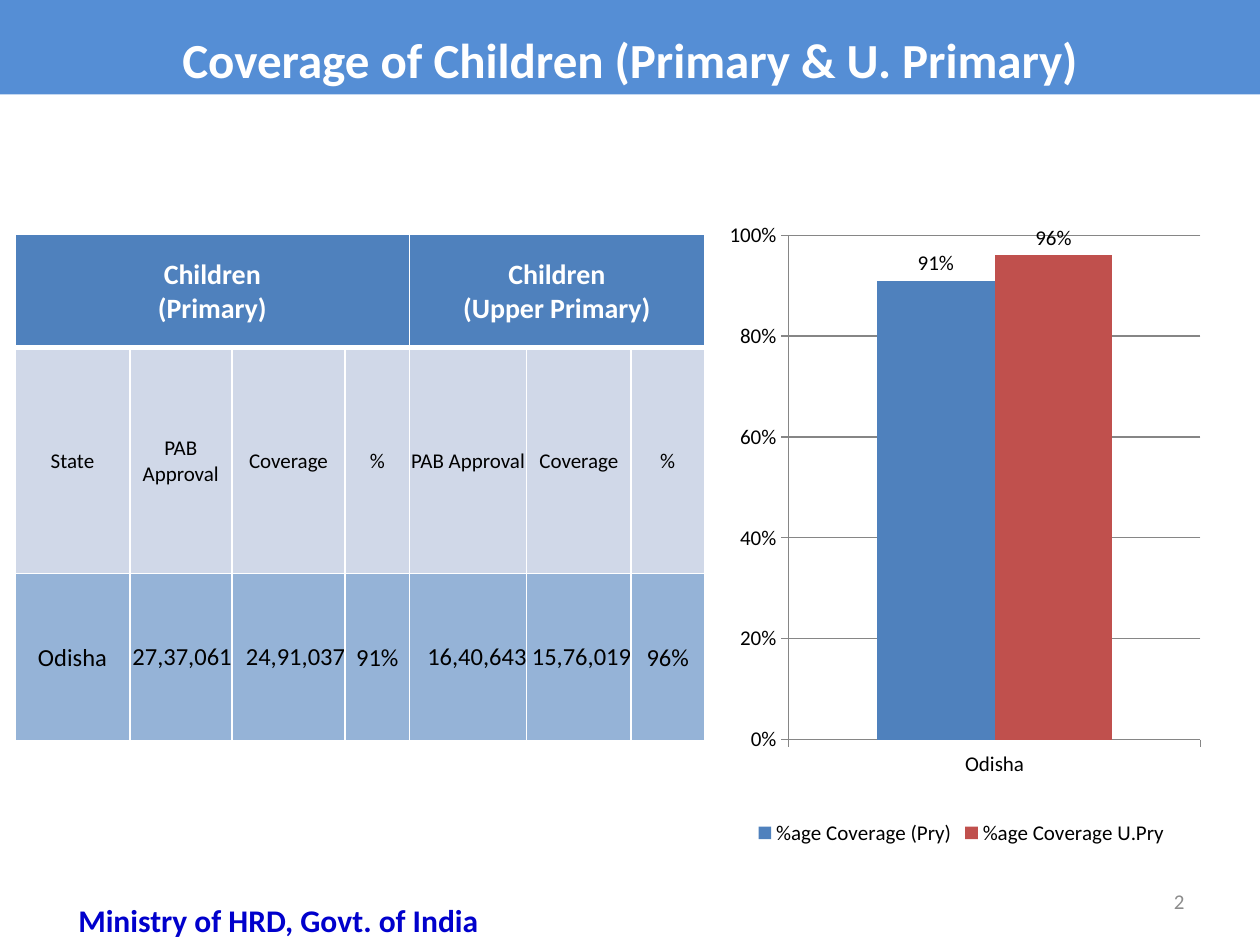
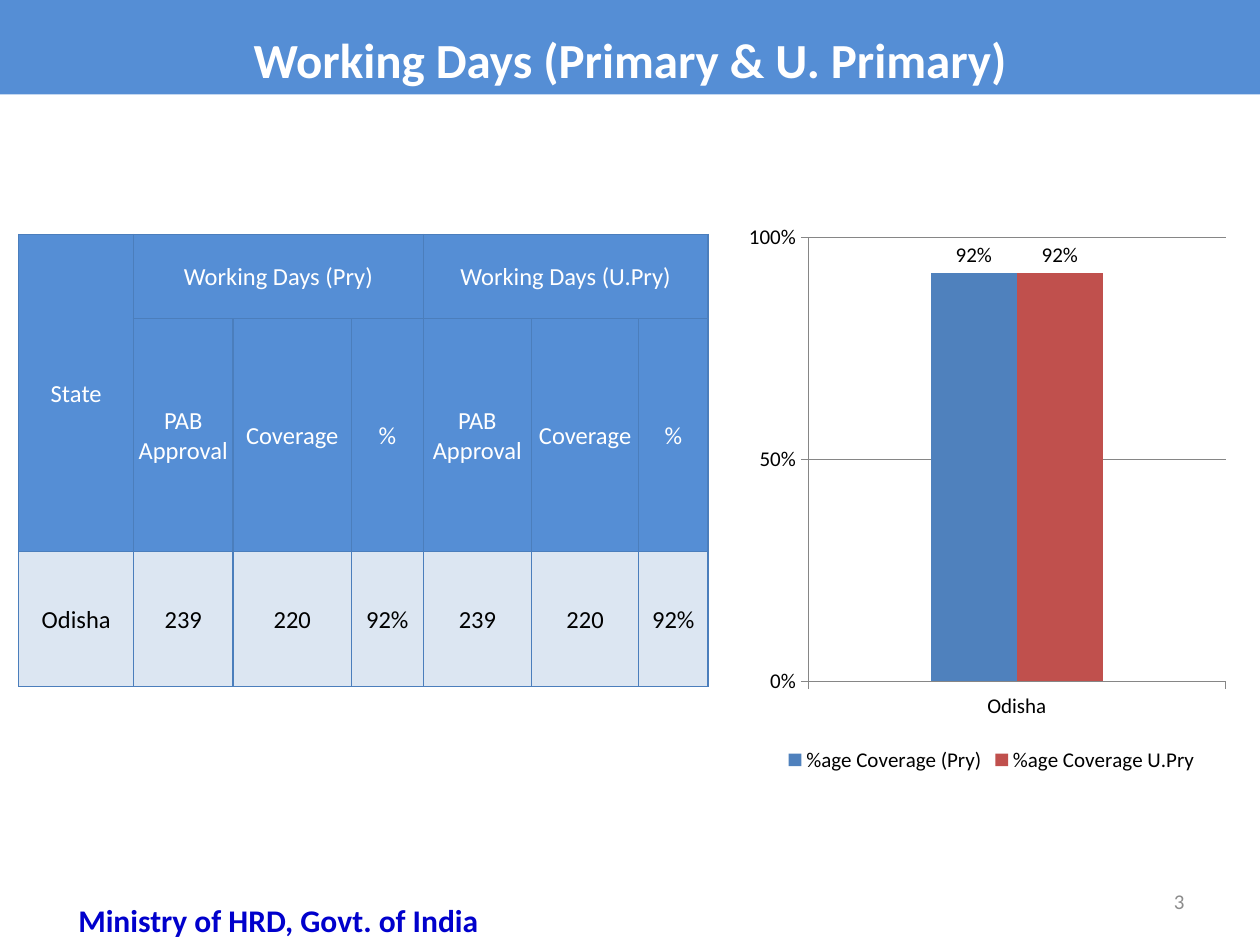
from dataclasses import dataclass

from lxml.etree import SubElement
from pptx import Presentation
from pptx.chart.data import CategoryChartData
from pptx.dml.color import RGBColor
from pptx.enum.chart import XL_CHART_TYPE, XL_LABEL_POSITION, XL_LEGEND_POSITION, XL_TICK_MARK
from pptx.enum.shapes import MSO_SHAPE
from pptx.enum.text import MSO_ANCHOR, PP_ALIGN
from pptx.oxml.ns import qn
from pptx.slide import Slide
from pptx.table import _Cell
from pptx.text.text import TextFrame
from pptx.util import Inches, Pt

FONT = "Calibri"
WHITE = RGBColor(0xFF, 0xFF, 0xFF)
BLACK = RGBColor(0, 0, 0)
BAND_BLUE = RGBColor(0x55, 0x8E, 0xD5)
PRIMARY_BLUE = RGBColor(0x4F, 0x81, 0xBD)
UPPER_RED = RGBColor(0xC0, 0x50, 0x4D)
LABEL_ROW = RGBColor(0xD0, 0xD8, 0xE8)
VALUE_ROW = RGBColor(0x95, 0xB3, 0xD7)
PALE_ROW = RGBColor(0xDC, 0xE6, 0xF2)
GRID_BLUE = RGBColor(0x4B, 0x7E, 0xBC)
AXIS_GRAY = RGBColor(0x86, 0x86, 0x86)
PAGE_GRAY = RGBColor(0x8C, 0x8C, 0x8C)
MINISTRY_BLUE = RGBColor(0, 0, 0xCC)

Box = tuple[float, float, float, float]
STATE = "Odisha"
SERIES = (("%age Coverage (Pry)", PRIMARY_BLUE), ("%age Coverage U.Pry", UPPER_RED))
MEASURES = ("PAB Approval", "Coverage", "%")


@dataclass(frozen=True)
class Row:
    height: float
    texts: tuple[str, ...]
    fill: RGBColor
    color: RGBColor
    size: int
    bold: bool = False
    right_aligned: tuple[int, ...] = ()
    top: float | None = None  # border widths that differ from the table's
    bottom: float | None = None


@dataclass(frozen=True)
class StateTable:
    left: float
    columns: tuple[float, ...]
    rows: tuple[Row, ...]
    merges: tuple[tuple[int, int, int, int], ...]  # first row, column; last row, column
    border: RGBColor
    border_width: float


@dataclass(frozen=True)
class CoverageChart:
    box: Box
    plot: Box
    shares: tuple[float, float]
    major_unit: float
    gap: int


@dataclass(frozen=True)
class Topic:
    title: str
    page: int
    table: StateTable
    chart: CoverageChart


TOPICS = (
    Topic(
        "Coverage of Children (Primary & U. Primary)", 2,
        StateTable(
            0.12, (0.91, 0.81, 0.9, 0.51, 0.93, 0.83, 0.58),
            (
                Row(0.9, ("Children\n(Primary)", "", "", "", "Children\n(Upper Primary)", "", ""),
                    PRIMARY_BLUE, WHITE, 16, bold=True, bottom=3),
                Row(1.79, ("State", *MEASURES * 2), LABEL_ROW, BLACK, 12, top=3),
                Row(1.33, (STATE, "27,37,061", "24,91,037", "91%", "16,40,643", "15,76,019", "96%"),
                    VALUE_ROW, BLACK, 14, right_aligned=(1, 2, 4, 5)),
            ),
            ((0, 0, 0, 3), (0, 4, 0, 6)), WHITE, 1,
        ),
        CoverageChart((5.58, 1.42, 4.1, 5.33), (0.166, 0.084, 0.797, 0.751), (0.91, 0.96), 0.2, 150),
    ),
    Topic(
        "Working Days (Primary & U. Primary)", 3,
        StateTable(
            0.15, (0.91, 0.79, 0.94, 0.57, 0.86, 0.85, 0.55),
            (
                Row(0.67, ("State", "Working Days (Pry)", "", "", "Working Days (U.Pry)", "", ""),
                    BAND_BLUE, WHITE, 14),
                Row(1.85, ("", *MEASURES * 2), BAND_BLUE, WHITE, 14),
                Row(1.07, (STATE, *("239", "220", "92%") * 2), PALE_ROW, BLACK, 14),
            ),
            ((0, 0, 1, 0), (0, 1, 0, 3), (0, 4, 0, 6)), GRID_BLUE, 0.75,
        ),
        CoverageChart((5.86, 1.56, 4.02, 4.61), (0.138, 0.071, 0.824, 0.764), (0.92, 0.92), 0.5, 285),
    ),
)


def write(frame: TextFrame, text: str, size: int, color: RGBColor,
          align: PP_ALIGN = PP_ALIGN.CENTER, bold: bool = False) -> None:
    frame.text = text
    frame.word_wrap = True
    for paragraph in frame.paragraphs:
        paragraph.alignment = align
        font = paragraph.font
        font.name, font.size, font.bold = FONT, Pt(size), bold
        font.color.rgb = color


def add_title(slide: Slide, title: str) -> None:
    band = slide.shapes.add_shape(MSO_SHAPE.RECTANGLE, 0, 0, Inches(10), Inches(0.75))
    band.shadow.inherit = False
    band.fill.solid()
    band.fill.fore_color.rgb = BAND_BLUE
    band.line.fill.background()
    write(band.text_frame, title, 28, WHITE, bold=True)
    band.text_frame.vertical_anchor = MSO_ANCHOR.MIDDLE
    band.text_frame.paragraphs[0].line_spacing = 1.4


def add_footer(slide: Slide, page: int) -> None:
    number = slide.shapes.add_textbox(Inches(7.17), Inches(6.95), Inches(2.33), Inches(0.4))
    write(number.text_frame, str(page), 12, PAGE_GRAY, PP_ALIGN.RIGHT)
    number.text_frame.vertical_anchor = MSO_ANCHOR.MIDDLE
    ministry = slide.shapes.add_textbox(Inches(0.25), Inches(7.1), Inches(3.92), Inches(0.4))
    write(ministry.text_frame, "Ministry of HRD, Govt. of India", 18, MINISTRY_BLUE, bold=True)


def set_borders(cell: _Cell, color: RGBColor, widths: dict[str, float]) -> None:
    properties = cell._tc.get_or_add_tcPr()
    for side, width in widths.items():
        line = SubElement(properties, qn(f"a:ln{side}"), w=str(Pt(width)))
        SubElement(SubElement(line, qn("a:solidFill")), qn("a:srgbClr"), val=str(color))


def add_state_table(slide: Slide, spec: StateTable) -> None:
    table = slide.shapes.add_table(
        len(spec.rows), len(spec.columns), Inches(spec.left), Inches(1.86),
        Inches(sum(spec.columns)), Inches(sum(row.height for row in spec.rows))).table
    table.first_row = table.horz_banding = False
    for column, width in zip(table.columns, spec.columns):
        column.width = Inches(width)
    for r, row in enumerate(spec.rows):
        table.rows[r].height = Inches(row.height)
        widths = {"L": spec.border_width, "R": spec.border_width,
                  "T": row.top or spec.border_width, "B": row.bottom or spec.border_width}
        for c, text in enumerate(row.texts):
            cell = table.cell(r, c)
            right = c in row.right_aligned
            # Borders come before the fill in the cell properties
            set_borders(cell, spec.border, widths)
            cell.fill.solid()
            cell.fill.fore_color.rgb = row.fill
            cell.margin_left = cell.margin_right = cell.margin_top = Inches(0 if right else 0.01)
            cell.margin_bottom = 0
            cell.vertical_anchor = MSO_ANCHOR.MIDDLE
            write(cell.text_frame, text, row.size, row.color,
                  PP_ALIGN.RIGHT if right else PP_ALIGN.CENTER, row.bold)
    for top, left, bottom, right in spec.merges:
        table.cell(top, left).merge(table.cell(bottom, right))


def add_coverage_chart(slide: Slide, spec: CoverageChart) -> None:
    data = CategoryChartData(number_format="0%")
    data.categories = [STATE]
    for (name, _), share in zip(SERIES, spec.shares):
        data.add_series(name, [share])
    chart = slide.shapes.add_chart(
        XL_CHART_TYPE.COLUMN_CLUSTERED, *map(Inches, spec.box), data).chart
    chart.has_title = False
    chart.font.name, chart.font.size = FONT, Pt(12)
    chart.font.color.rgb = BLACK
    chart.has_legend = True
    chart.legend.position = XL_LEGEND_POSITION.BOTTOM
    chart.legend.include_in_layout = False

    # Columns and their labels
    plot = chart.plots[0]
    plot.gap_width, plot.overlap, plot.vary_by_categories = spec.gap, 0, False
    for series, (_, color) in zip(plot.series, SERIES):
        series.format.fill.solid()
        series.format.fill.fore_color.rgb = color
        labels = series.data_labels
        labels.show_value = True
        labels.number_format, labels.number_format_is_linked = "0%", False
        labels.position = XL_LABEL_POSITION.OUTSIDE_END

    # Axes and gridlines
    shares = chart.value_axis
    shares.minimum_scale, shares.maximum_scale, shares.major_unit = 0, 1, spec.major_unit
    shares.has_major_gridlines = True
    shares.tick_labels.number_format = "0%"
    shares.tick_labels.number_format_is_linked = False
    for axis in (shares, chart.category_axis):
        axis.major_tick_mark = XL_TICK_MARK.OUTSIDE
    for part in (shares, chart.category_axis, shares.major_gridlines):
        part.format.line.color.rgb = AXIS_GRAY
        part.format.line.width = Pt(0.75)

    # Fixed inner plot area
    area = chart.element.find(".//" + qn("c:plotArea"))
    for automatic in area.findall(qn("c:layout")):
        area.remove(automatic)
    layout = SubElement(area, qn("c:layout"))
    area.insert(0, layout)
    manual = SubElement(layout, qn("c:manualLayout"))
    settings = (("layoutTarget", "inner"), ("xMode", "edge"), ("yMode", "edge"),
                *zip("xywh", spec.plot))
    for tag, value in settings:
        SubElement(manual, qn(f"c:{tag}"), val=str(value))


def main() -> None:
    deck = Presentation()
    deck.slide_width, deck.slide_height = Inches(10), Inches(7.5)
    for topic in TOPICS:
        slide = deck.slides.add_slide(deck.slide_layouts[6])
        add_title(slide, topic.title)
        add_coverage_chart(slide, topic.chart)
        add_state_table(slide, topic.table)
        add_footer(slide, topic.page)
    deck.save("out.pptx")


if __name__ == "__main__":
    main()
